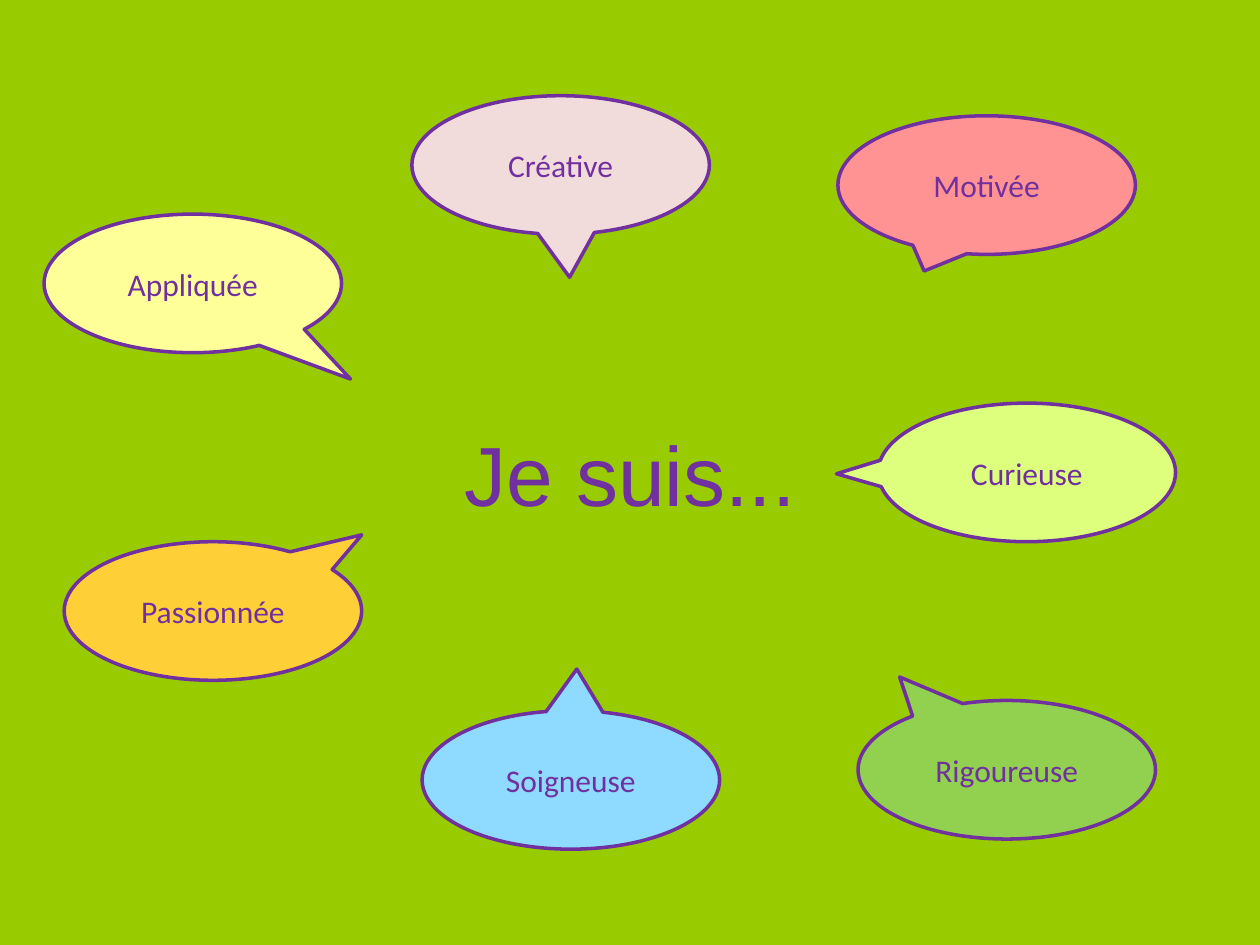
from pptx import Presentation
from pptx.dml.color import RGBColor
from pptx.enum import shapes, text
from pptx.util import Pt

PURPLE = "7030A0"
BUBBLE_WIDTH, BUBBLE_HEIGHT = 170, 79.2

# word, left, top, fill, tail tip as a share of the bubble's size from its centre
BUBBLES = [
    ("Curieuse", 501.8, 230.4, "DDFF7D", (-0.64, 0.01)),
    ("Motivée", 478.8, 66.2, "FF9393", (-0.21, 0.62)),
    ("Soigneuse", 241.2, 406.1, "8FDAFF", (0.02, -0.8)),
    ("Créative", 235.4, 54.7, "F2DCDB", (0.03, 0.81)),
    ("Rigoureuse", 490.3, 400.3, "92D050", (-0.36, -0.67)),
    ("Passionnée", 36.7, 309.6, "FFCF37", (0.5, -0.55)),
    ("Appliquée", 25.2, 122.4, "FFFF99", (0.53, 0.69)),
]


def paint(fill, color):
    fill.solid()
    fill.fore_color.rgb = RGBColor.from_string(color)


def write_centred(shape, words, font_name, size):
    frame = shape.text_frame
    frame.word_wrap = True
    frame.vertical_anchor = text.MSO_ANCHOR.MIDDLE
    frame.text = words
    paragraph = frame.paragraphs[0]
    paragraph.alignment = text.PP_ALIGN.CENTER
    font = paragraph.runs[0].font
    font.name = font_name
    font.size = Pt(size)
    paint(font.fill, PURPLE)


def add_title(slide, words):
    box = slide.shapes.add_textbox(Pt(240.5), Pt(237.6), Pt(239), Pt(65.5))
    write_centred(box, words, "Arial", 48)


def add_bubble(slide, word, left, top, color, tail):
    bubble = slide.shapes.add_shape(
        shapes.MSO_SHAPE.OVAL_CALLOUT,
        Pt(left), Pt(top), Pt(BUBBLE_WIDTH), Pt(BUBBLE_HEIGHT))
    bubble.adjustments[0], bubble.adjustments[1] = tail
    bubble.shadow.inherit = False
    paint(bubble.fill, color)
    paint(bubble.line.fill, PURPLE)
    bubble.line.width = Pt(2)
    write_centred(bubble, word, "Calibri", 18)


def main():
    presentation = Presentation()
    presentation.slide_width, presentation.slide_height = Pt(720), Pt(540)
    slide = presentation.slides.add_slide(presentation.slide_layouts[6])
    paint(slide.background.fill, "99CC00")
    add_title(slide, "Je suis...")
    for bubble in BUBBLES:
        add_bubble(slide, *bubble)
    presentation.save("out.pptx")


if __name__ == "__main__":
    main()
